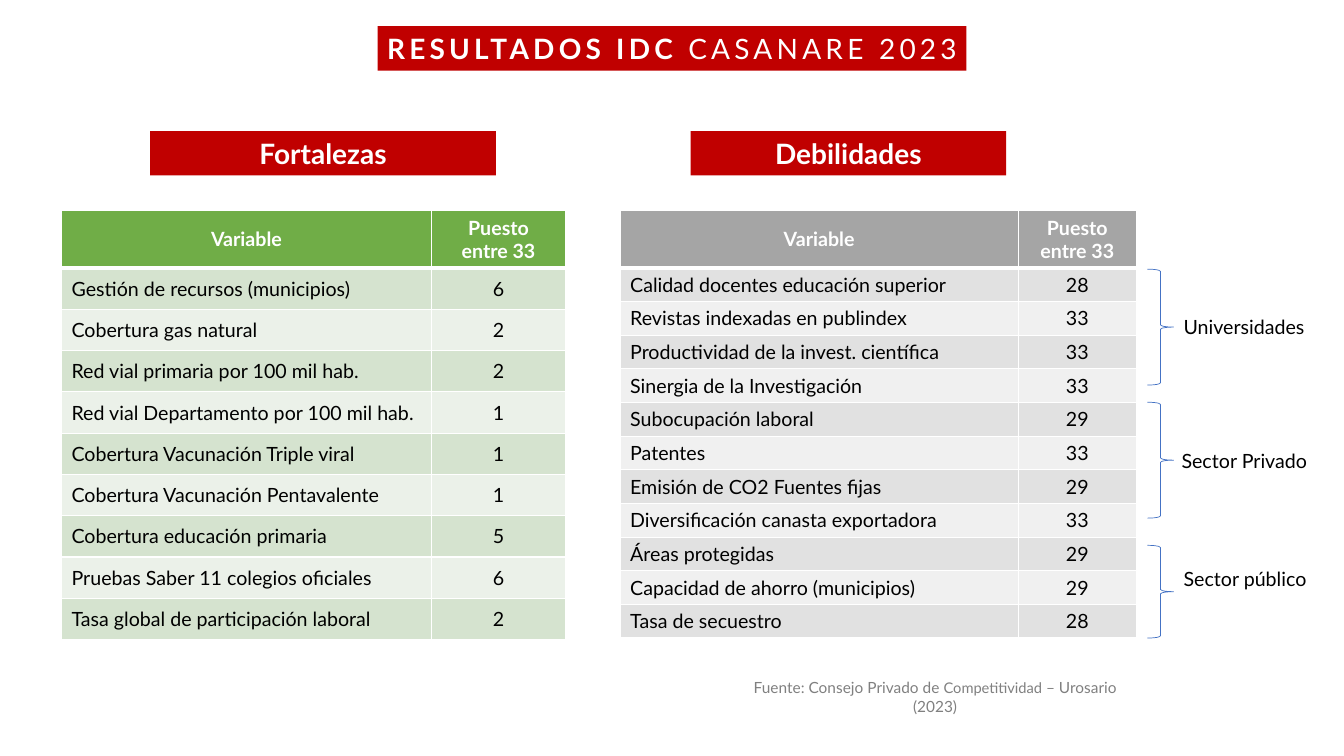
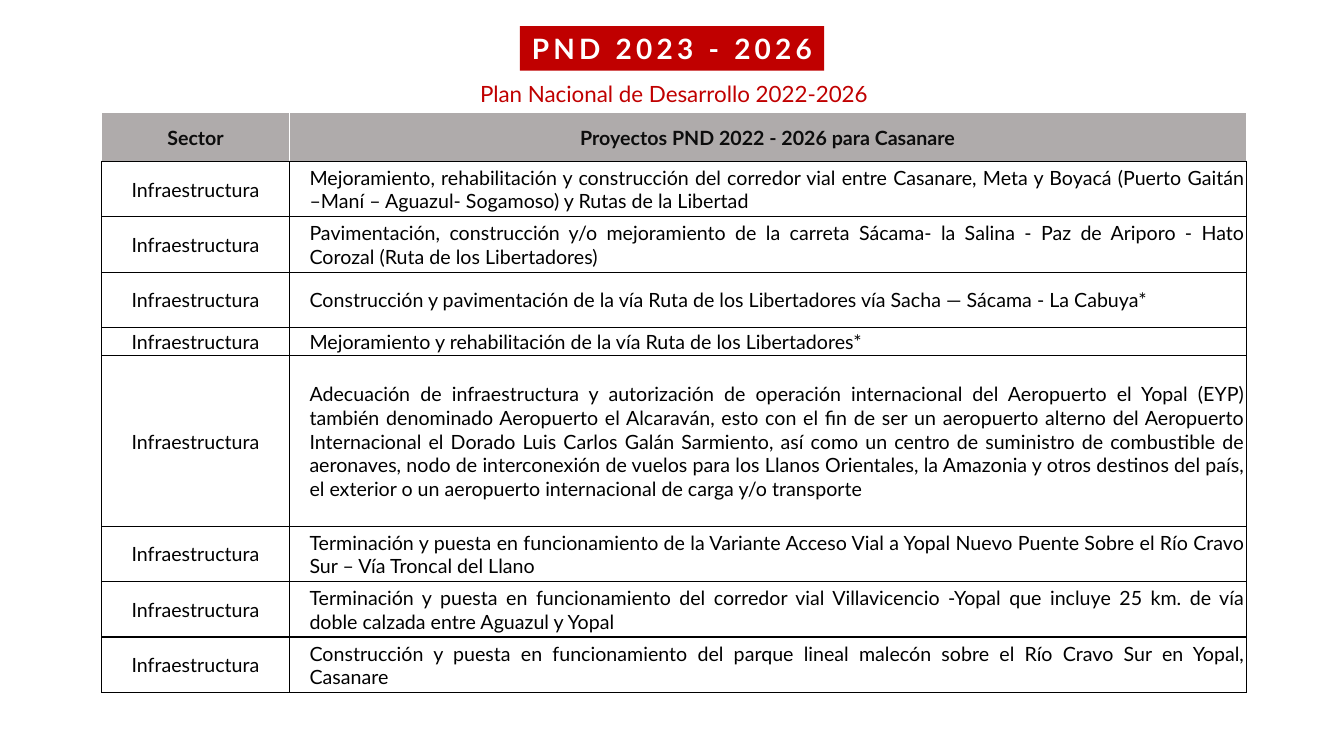
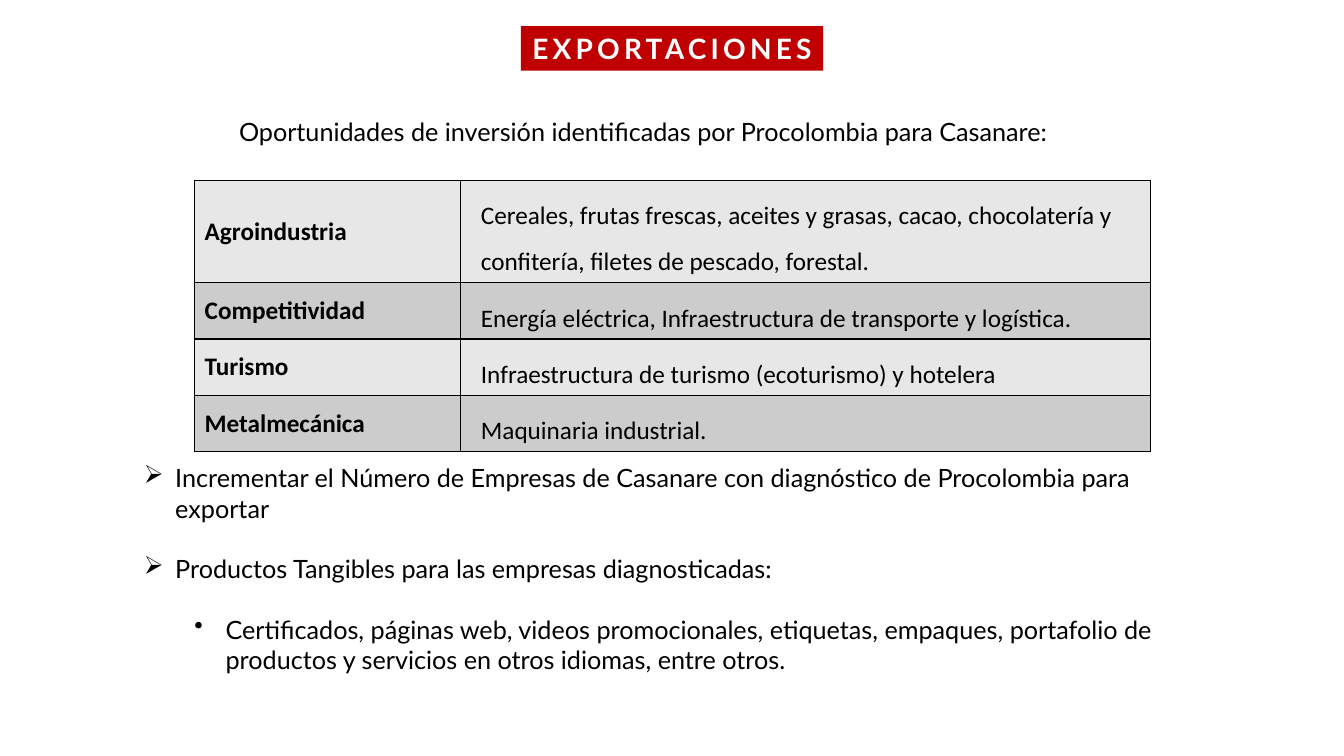
from dataclasses import dataclass, field
from typing import Optional
from lxml.etree import SubElement as Sub
from pptx import Presentation
from pptx.dml.color import RGBColor as RGB
from pptx.enum.shapes import MSO_SHAPE as Form
from pptx.enum.text import MSO_ANCHOR as Anchor, MSO_AUTO_SIZE as Auto, PP_ALIGN as Align
from pptx.oxml import parse_xml
from pptx.oxml.ns import nsdecls, qn
from pptx.util import Inches, Pt

RED = RGB(0xC0, 0x00, 0x00)
WHITE = RGB(0xFF, 0xFF, 0xFF)
BLACK = RGB(0x00, 0x00, 0x00)
INK = RGB(0x0D, 0x0D, 0x0D)
NOTE = RGB(0x80, 0x80, 0x80)
BLUE = RGB(0x44, 0x72, 0xC4)
GREEN = RGB(0x70, 0xAD, 0x47)
GREENS = (RGB(0xD5, 0xE3, 0xCF), RGB(0xEB, 0xF1, 0xE9))
GRAY = RGB(0xA5, 0xA5, 0xA5)
GRAYS = (RGB(0xE1, 0xE1, 0xE1), RGB(0xF0, 0xF0, 0xF0))
STONE = RGB(0xAF, 0xAB, 0xAB)
STONES = (RGB(0xE7, 0xE7, 0xE7), RGB(0xCC, 0xCC, 0xCC))
WIDTH = 13.33
PLAIN = (0.1, 0.05, 0.1, 0.05)
TIGHT = (0.01, 0.01, 0.01, 0)
SIDES = ("left", "top", "right", "bottom")


@dataclass(frozen=True)
class Face:
    """Character format."""
    size: float = 14
    color: RGB = BLACK
    bold: bool = False
    name: str = "Lato"
    gap: int = 0


@dataclass(frozen=True)
class Col:
    """Width and body format of a table column."""
    width: float
    align: Align = Align.LEFT
    pad: tuple = PLAIN
    anchor: Anchor = Anchor.MIDDLE
    face: Face = Face()
    lead: Optional[float] = None


@dataclass(frozen=True)
class Head:
    """Labels and format of a header row."""
    labels: tuple
    fill: RGB
    face: Face
    base: tuple
    pad: tuple = PLAIN


@dataclass(frozen=True)
class Grid:
    """A whole table."""
    left: float
    top: float
    cols: tuple
    rows: list
    highs: list
    line: RGB
    fills: tuple = ()
    head: Optional[Head] = None


@dataclass(frozen=True)
class Note:
    """A free text box."""
    box: tuple
    runs: list
    align: Align = Align.LEFT


@dataclass(frozen=True)
class Item:
    """A bulleted line."""
    text: str
    mark: str
    left: float
    level: int = 0


@dataclass(frozen=True)
class Group:
    """A brace with its label."""
    text: str
    top: float
    high: float
    left: float
    label: float


@dataclass(frozen=True)
class Page:
    """Title and contents of a slide."""
    width: float
    title: list
    grids: list
    notes: list = field(default_factory=list)
    chips: list = field(default_factory=list)
    groups: list = field(default_factory=list)
    items: list = field(default_factory=list)


TITLE = Face(20, WHITE, True, gap=300)
CHIP = Face(20, WHITE, True)
BODY = Face(18)
LABEL = Face(14, WHITE, True)
CELL = Face(18, name="Calibri")


def put(obj: object, vals: dict) -> None:
    """Set each value as an attribute."""
    for key, val in vals.items():
        setattr(obj, key, val)


def write(para, runs: list, align: Align = Align.LEFT) -> None:
    """Fill a paragraph with formatted runs."""
    para.alignment = align
    for text, face in runs:
        run = para.add_run()
        run.text = text
        put(run.font, {"size": Pt(face.size), "bold": face.bold, "name": face.name})
        run.font.color.rgb = face.color
        if face.gap:
            run.font._element.set("spc", str(face.gap))


def inch(box: tuple) -> list:
    """Turn numbers into lengths."""
    return [Inches(val) for val in box]


def paint(shape, color: RGB) -> None:
    """Fill a shape and drop its outline."""
    shape.fill.solid()
    shape.fill.fore_color.rgb = color
    shape.line.fill.background()


def add_title(slide, page: Page) -> None:
    """Turn the title placeholder into the red band."""
    band = slide.shapes.title
    box = inch(((WIDTH - page.width) / 2, 0.26, page.width, 0.44))
    put(band, dict(zip(("left", "top", "width", "height"), box)))
    paint(band, RED)
    put(band.text_frame, {"word_wrap": False, "auto_size": Auto.NONE,
                          "vertical_anchor": Anchor.MIDDLE,
                          "margin_left": 0, "margin_right": 0})
    write(band.text_frame.paragraphs[0], page.title, Align.CENTER)


def add_chip(slide, text: str, box: tuple) -> None:
    """Draw a red heading."""
    chip = slide.shapes.add_shape(Form.RECTANGLE, *inch(box))
    chip.shadow.inherit = False
    paint(chip, RED)
    write(chip.text_frame.paragraphs[0], [(text, CHIP)], Align.CENTER)


def add_note(slide, note: Note) -> None:
    """Draw a text box."""
    frame = slide.shapes.add_textbox(*inch(note.box)).text_frame
    frame.word_wrap = True
    write(frame.paragraphs[0], note.runs, note.align)


def add_group(slide, group: Group) -> None:
    """Draw a brace and its label."""
    brace = slide.shapes.add_shape(Form.RIGHT_BRACE, *inch((11.38, group.top, 0.26, group.high)))
    brace.shadow.inherit = False
    brace.fill.background()
    brace.line.color.rgb = BLUE
    brace.line.width = Pt(0.5)
    add_note(slide, Note((group.left, group.label, 1.69, 0.34), [(group.text, Face())]))


def add_list(slide, items: list) -> None:
    """Draw the bulleted list."""
    frame = slide.shapes.add_textbox(*inch((1.33, 4.54, 10.73, 1.92))).text_frame
    frame.word_wrap = True
    for num, item in enumerate(items):
        para = frame.add_paragraph() if num else frame.paragraphs[0]
        para.level = item.level
        props = para._p.get_or_add_pPr()
        props.set("marL", str(Inches(item.left)))
        props.set("indent", str(Inches(-0.31)))
        Sub(props, qn("a:buChar")).set("char", item.mark)
        if num:
            para.space_before = Pt(21.6)
        write(para, [(item.text, BODY)])


def edge(cell, lines: dict) -> None:
    """Set the borders of a cell."""
    props = cell._tc.get_or_add_tcPr()
    for num, side in enumerate("LRTB"):
        color, width = lines[side]
        props.insert(num, parse_xml(
            f'<a:ln{side} {nsdecls("a")} w="{Pt(width)}"><a:solidFill>'
            f'<a:srgbClr val="{color}"/></a:solidFill></a:ln{side}>'))


def set_cell(cell, text: str, col: Col, fill: Optional[RGB], lines: dict) -> None:
    """Fill and format one cell."""
    put(cell, {f"margin_{side}": Inches(val) for side, val in zip(SIDES, col.pad)})
    cell.vertical_anchor = col.anchor
    if fill is None:
        cell.fill.background()
    else:
        cell.fill.solid()
        cell.fill.fore_color.rgb = fill
    edge(cell, lines)
    for num, part in enumerate(text.split("\n")):
        para = cell.text_frame.add_paragraph() if num else cell.text_frame.paragraphs[0]
        if col.lead:
            para.line_spacing = col.lead
        write(para, [(part, col.face)], col.align)


def add_grid(slide, grid: Grid) -> None:
    """Draw a table."""
    head = grid.head
    size = (sum(col.width for col in grid.cols), sum(grid.highs))
    table = slide.shapes.add_table(len(grid.highs), len(grid.cols),
                                   *inch((grid.left, grid.top, *size))).table
    put(table, {"first_row": head is not None, "horz_banding": False})
    for row, high in zip(table.rows, grid.highs):
        row.height = Inches(high)
    start = 1 if head else 0
    for pos, col in enumerate(grid.cols):
        table.columns[pos].width = Inches(col.width)
        if head:
            lines = dict.fromkeys("LRT", (WHITE, 1)) | {"B": head.base}
            top = Col(col.width, Align.CENTER, head.pad, face=head.face)
            set_cell(table.cell(0, pos), head.labels[pos], top, head.fill, lines)
        for num, row in enumerate(grid.rows):
            lines = dict.fromkeys("LRTB", (grid.line, 1))
            if head and num == 0:
                lines["T"] = head.base
            fill = grid.fills[num % 2] if grid.fills else None
            set_cell(table.cell(num + start, pos), row[pos], col, fill, lines)


def rank(left: float, wide: tuple, high: tuple, fill: RGB, fills: tuple, rows: list) -> Grid:
    """Describe a ranking table."""
    head = Head(("Variable", "Puesto\nentre 33"), fill, LABEL, (WHITE, 3))
    cols = (Col(wide[0]), Col(wide[1], Align.CENTER))
    return Grid(left, 2.09, cols, rows, [high[0]] + [high[1]] * len(rows), WHITE, fills, head)


STRONG = [
    ("Gestión de recursos (municipios)", "6"),
    ("Cobertura gas natural", "2"),
    ("Red vial primaria por 100 mil hab.", "2"),
    ("Red vial Departamento por 100 mil hab.", "1"),
    ("Cobertura Vacunación Triple viral", "1"),
    ("Cobertura Vacunación Pentavalente", "1"),
    ("Cobertura educación primaria", "5"),
    ("Pruebas Saber 11 colegios oficiales", "6"),
    ("Tasa global de participación laboral", "2"),
]
WEAK = [
    ("Calidad docentes educación superior", "28"),
    ("Revistas indexadas en publindex", "33"),
    ("Productividad de la invest. científica", "33"),
    ("Sinergia de la Investigación", "33"),
    ("Subocupación laboral", "29"),
    ("Patentes", "33"),
    ("Emisión de CO2 Fuentes fijas", "29"),
    ("Diversificación canasta exportadora", "33"),
    ("Áreas protegidas", "29"),
    ("Capacidad de ahorro (municipios)", "29"),
    ("Tasa de secuestro", "28"),
]
WORKS = [
    "Mejoramiento, rehabilitación y construcción del corredor vial entre Casanare, Meta y Boyacá "
    "(Puerto Gaitán –Maní – Aguazul- Sogamoso) y Rutas de la Libertad",
    "Pavimentación, construcción y/o mejoramiento de la carreta Sácama- la Salina - Paz de Ariporo "
    "- Hato Corozal (Ruta de los Libertadores)",
    "Construcción y pavimentación de la vía Ruta de los Libertadores vía Sacha — Sácama - La Cabuya*",
    "Mejoramiento y rehabilitación de la vía Ruta de los Libertadores*",
    "Adecuación de infraestructura y autorización de operación internacional del Aeropuerto el Yopal "
    "(EYP) también denominado Aeropuerto el Alcaraván, esto con el fin de ser un aeropuerto alterno "
    "del Aeropuerto Internacional el Dorado Luis Carlos Galán Sarmiento, así como un centro de "
    "suministro de combustible de aeronaves, nodo de interconexión de vuelos para los Llanos "
    "Orientales, la Amazonia y otros destinos del país, el exterior o un aeropuerto internacional "
    "de carga y/o transporte",
    "Terminación y puesta en funcionamiento de la Variante Acceso Vial a Yopal Nuevo Puente Sobre "
    "el Río Cravo Sur – Vía Troncal del Llano",
    "Terminación y puesta en funcionamiento del corredor vial Villavicencio -Yopal que incluye "
    "25 km. de vía doble calzada entre Aguazul y Yopal",
    "Construcción y puesta en funcionamiento del parque lineal malecón sobre el Río Cravo Sur en "
    "Yopal, Casanare",
]
TRADE = [
    ("Agroindustria", "Cereales, frutas frescas, aceites y grasas, cacao, chocolatería y confitería, "
     "filetes de pescado, forestal."),
    ("Competitividad", "Energía eléctrica, Infraestructura de transporte y logística."),
    ("Turismo", "Infraestructura de turismo (ecoturismo) y hotelera"),
    ("Metalmecánica", "Maquinaria industrial."),
]
PAGES = [
    Page(
        5.84,
        [("RESULTADOS IDC ", TITLE), ("CASANARE 2023", Face(20, WHITE, gap=300))],
        [rank(0.61, (3.67, 1.33), (0.55, 0.41), GREEN, GREENS, STRONG),
         rank(6.15, (3.95, 1.17), (0.56, 0.33), GRAY, GRAYS, WEAK)],
        notes=[Note((7.28, 6.68, 3.99, 0.29),
                    [("Fuente: Consejo Privado de ", Face(11, NOTE)),
                     ("Competitividad", Face(10.5, NOTE)),
                     (" – Urosario (2023)", Face(11, NOTE))], Align.CENTER)],
        chips=[("Fortalezas", (1.49, 1.3, 3.43, 0.44)),
               ("Debilidades", (6.85, 1.3, 3.13, 0.44))],
        groups=[Group("Universidades", 2.67, 1.15, 11.64, 3.08),
                Group("Sector Privado", 3.99, 1.15, 11.62, 4.4),
                Group("Sector público", 5.41, 0.92, 11.64, 5.58)],
    ),
    Page(
        3.02,
        [("PND 2023 - 2026", TITLE)],
        [Grid(1.01, 1.12,
              (Col(1.86, Align.CENTER, TIGHT), Col(9.49, Align.JUSTIFY, (0.2, 0.01, 0.01, 0))),
              [("Infraestructura", work) for work in WORKS],
              [0.48] + [0.55] * 3 + [0.28, 1.69] + [0.55] * 3, BLACK,
              head=Head(("Sector", "Proyectos PND 2022 - 2026 para Casanare"), STONE,
                        Face(14, INK, True), (BLACK, 1), TIGHT))],
        notes=[Note((4.61, 0.75, 4.15, 0.37),
                    [("Plan Nacional de Desarrollo 2022-2026", Face(16, RED))], Align.CENTER)],
    ),
    Page(
        3,
        [("EXPORTACIONES", TITLE)],
        [Grid(1.93, 1.79,
              (Col(2.64, face=Face(18, bold=True, name="Calibri")),
               Col(6.84, pad=(0.2, 0.05, 0.1, 0.05), anchor=Anchor.TOP, face=CELL, lead=1.5)),
              TRADE, [0.99] + [0.55] * 3, BLACK, STONES)],
        notes=[Note((2.25, 1.11, 8.26, 0.4),
                    [("Oportunidades de inversión identificadas por Procolombia para Casanare:",
                      BODY)], Align.CENTER)],
        items=[Item("Incrementar el Número de Empresas de Casanare con diagnóstico de "
                    "Procolombia para exportar", "➢", 0.31),
               Item("Productos Tangibles para las empresas diagnosticadas:", "➢", 0.31),
               Item("Certificados, páginas web, videos promocionales, etiquetas, empaques, "
                    "portafolio de productos y servicios en otros idiomas, entre otros.",
                    "•", 0.81, 1)],
    ),
]


def main() -> None:
    """Build and save the slides."""
    deck = Presentation()
    put(deck, {"slide_width": Inches(WIDTH), "slide_height": Inches(7.5)})
    for page in PAGES:
        slide = deck.slides.add_slide(deck.slide_layouts[5])
        add_title(slide, page)
        for text, box in page.chips:
            add_chip(slide, text, box)
        for grid in page.grids:
            add_grid(slide, grid)
        for group in page.groups:
            add_group(slide, group)
        for note in page.notes:
            add_note(slide, note)
        if page.items:
            add_list(slide, page.items)
    deck.save("out.pptx")


if __name__ == "__main__":
    main()
